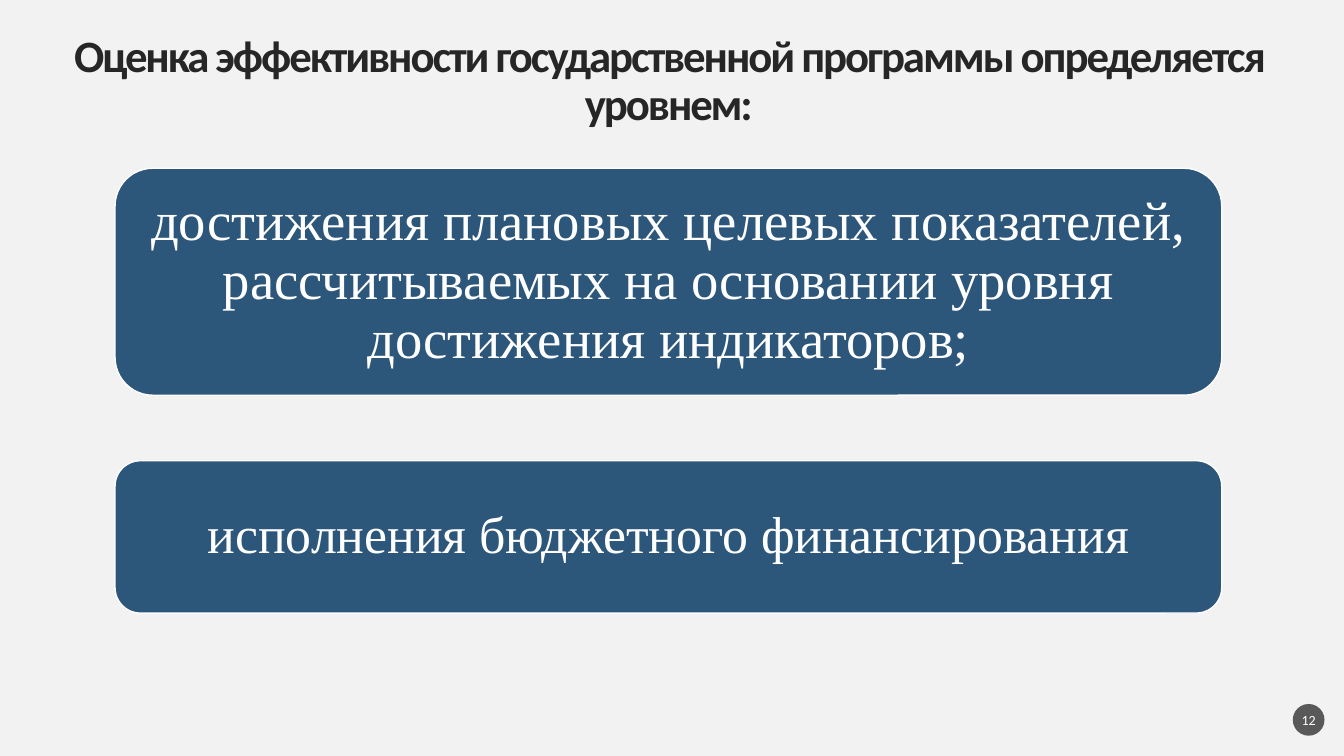
from pptx import Presentation
from pptx.dml.color import RGBColor
from pptx.enum.shapes import MSO_SHAPE
from pptx.enum.text import MSO_ANCHOR, PP_ALIGN
from pptx.util import Cm, Pt

BACKGROUND = RGBColor(0xF2, 0xF2, 0xF2)
NAVY = RGBColor(0x2C, 0x56, 0x7A)
WHITE = RGBColor(0xFF, 0xFF, 0xFF)
DARK = RGBColor(0x26, 0x26, 0x26)
GREY = RGBColor(0x59, 0x59, 0x59)


def write(shape, text, font_name, size, color, inset=0):
    """Put one centred paragraph into a shape."""
    frame = shape.text_frame
    frame.word_wrap = True
    frame.vertical_anchor = MSO_ANCHOR.MIDDLE
    frame.margin_left = frame.margin_right = Cm(inset)
    frame.margin_top = frame.margin_bottom = Cm(inset)
    frame.text = text
    paragraph = frame.paragraphs[0]
    paragraph.alignment = PP_ALIGN.CENTER
    paragraph.line_spacing = 0.9
    paragraph.font.name = font_name
    paragraph.font.size = Pt(size)
    paragraph.font.color.rgb = color
    return paragraph


def add_filled(kind, left, top, width, height, color):
    """Add a flat preset shape, lengths in centimetres."""
    shape = slide.shapes.add_shape(kind, Cm(left), Cm(top), Cm(width), Cm(height))
    shape.shadow.inherit = False
    shape.fill.solid()
    shape.fill.fore_color.rgb = color
    return shape


prs = Presentation()
prs.slide_width, prs.slide_height = Cm(33.87), Cm(19.05)
slide = prs.slides.add_slide(prs.slide_layouts[5])
slide.background.fill.solid()
slide.background.fill.fore_color.rgb = BACKGROUND

# Title with tightened letter spacing
title = slide.shapes.title
title.left, title.top, title.width, title.height = Cm(1.12), Cm(1.47), Cm(31.47), Cm(1.2)
heading = write(title, "Оценка эффективности государственной программы определяется уровнем:",
                "Calibri", 32, DARK)
heading.font.bold = True
heading.runs[0].font._element.set("spc", "-150")

# Criteria: text, top, height, font size
criteria = [
    ("достижения плановых целевых показателей, рассчитываемых на основании "
     "уровня достижения индикаторов;", 4.24, 5.72, 39),
    ("исполнения бюджетного финансирования", 11.61, 3.84, 37),
]
for text, top, height, size in criteria:
    criterion = add_filled(MSO_SHAPE.ROUNDED_RECTANGLE, 2.9, top, 27.89, height, NAVY)
    criterion.line.color.rgb = WHITE
    criterion.line.width = Pt(1)
    write(criterion, text, "Times New Roman", size, WHITE, inset=0.4)

# Page number
page_number = add_filled(MSO_SHAPE.OVAL, 32.58, 17.74, 0.8, 0.8, GREY)
page_number.line.fill.background()
write(page_number, "12", "Calibri", 10, WHITE).line_spacing = 1.0

prs.save("out.pptx")
